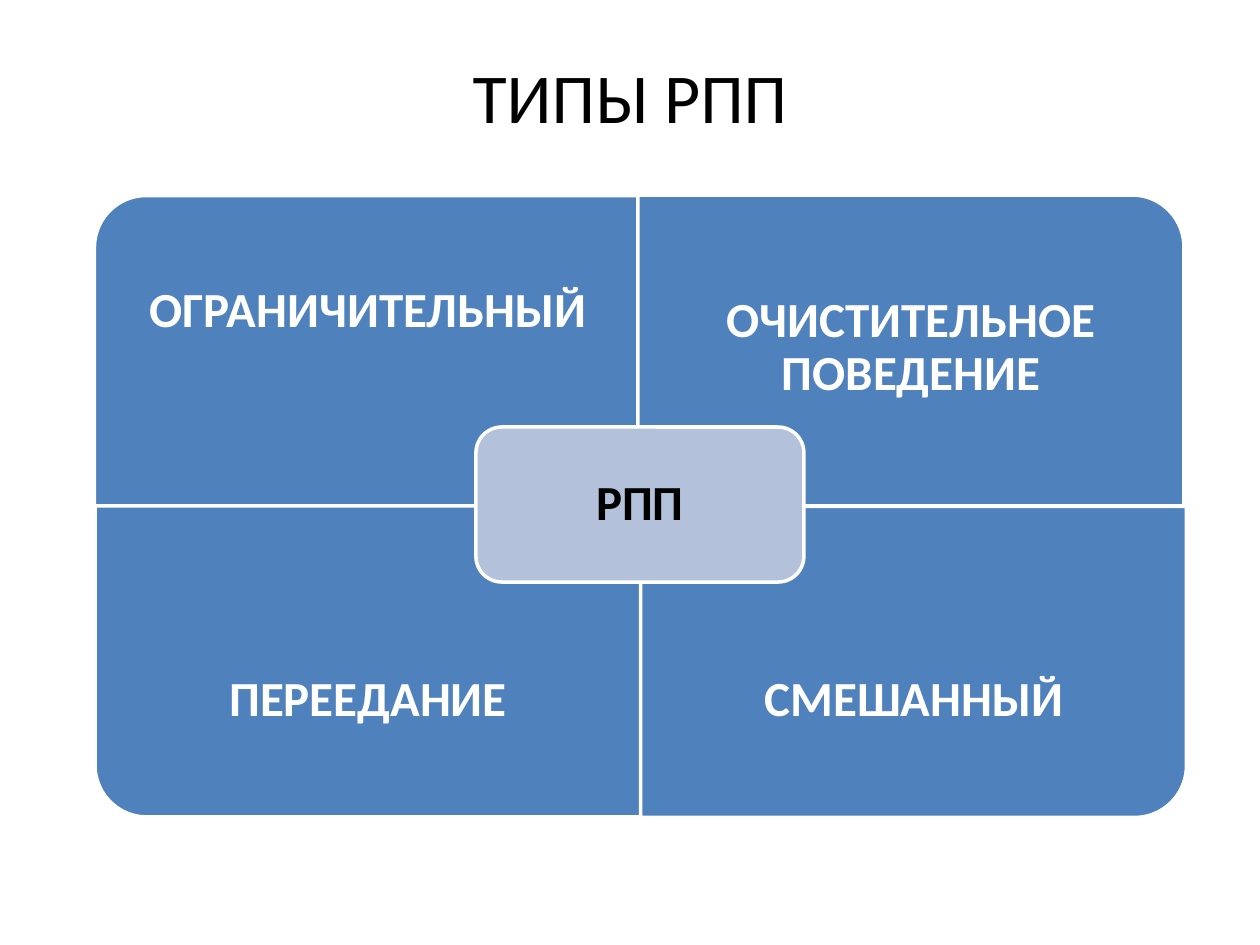
from pptx import Presentation
from pptx.dml.color import RGBColor
from pptx.enum.shapes import MSO_SHAPE
from pptx.enum.text import MSO_ANCHOR, PP_ALIGN
from pptx.util import Pt

PX = 914400 // 126  # EMU in one px
FONT = "Calibri"
WHITE, BLACK, BLUE, PALE = "FFFFFF", "000000", "4F81BD", "B3C1DB"

# Quadrant grid
LEFT, TOP, WIDE, HIGH = 95, 195, 546, 311
TEXT_H = 233

# Label, left, row, turn, extra drop of the text
QUADS = [
    ("ОГРАНИЧИТЕЛЬНЫЙ", LEFT, 0, 270, 0),
    ("ОЧИСТИТЕЛЬНОЕ ПОВЕДЕНИЕ", 638, 0, 0, 37),
    ("ПЕРЕЕДАНИЕ", LEFT, 1, 180, 0),
    ("СМЕШАННЫЙ", LEFT + WIDE, 1, 90, 0),
]


def px(num):
    return num * PX


def color(code):
    return RGBColor.from_string(code)


def style(frame, text, size, code, bold=False):
    frame.text = text
    frame.word_wrap = True
    frame.vertical_anchor = MSO_ANCHOR.MIDDLE
    para = frame.paragraphs[0]
    para.alignment = PP_ALIGN.CENTER
    font = para.runs[0].font
    font.name, font.size, font.bold = FONT, Pt(size), bold
    font.color.rgb = color(code)
    return para


def add_box(slide, kind, left, top, wide, high, fill, turn=0):
    # A quarter turn swaps the sides about the same centre
    if turn % 180:
        left += (wide - high) // 2
        top -= (wide - high) // 2
        wide, high = high, wide
    box = slide.shapes.add_shape(kind, px(left), px(top), px(wide), px(high))
    box.rotation = turn
    box.shadow.inherit = False
    box.fill.solid()
    box.fill.fore_color.rgb = color(fill)
    box.line.color.rgb = color(WHITE)
    box.line.width = Pt(2)


def add_label(slide, text, left, top, wide, high, code, inset, drop=0):
    box = slide.shapes.add_textbox(px(left), px(top), px(wide), px(high))
    frame = box.text_frame
    frame.margin_left = frame.margin_right = px(inset)
    # Shift the middle by taking room from the top inset
    frame.margin_top = px(inset + 2 * drop)
    frame.margin_bottom = px(inset)
    if drop:
        frame.margin_top -= px(inset // 2)
        frame.margin_bottom -= px(inset // 2)
    para = style(frame, text, 28, code, True)
    para.line_spacing = 0.9


def add_title(slide, text):
    title = slide.shapes.title
    title.left, title.top = px(63), px(16)
    title.width, title.height = px(1134), px(158)
    style(title.text_frame, text, 40, BLACK)


def main():
    deck = Presentation()
    deck.slide_width, deck.slide_height = px(1260), px(945)
    slide = deck.slides.add_slide(deck.slide_layouts[5])
    add_title(slide, "ТИПЫ РПП")

    # Four quadrants, each with its outer corner rounded
    for text, left, row, turn, drop in QUADS:
        top = TOP + row * HIGH
        add_box(slide, MSO_SHAPE.ROUND_1_RECTANGLE, left, top, WIDE, HIGH,
                BLUE, turn)
        add_label(slide, text, left, top + row * (HIGH - TEXT_H), WIDE,
                  TEXT_H, WHITE, 28, drop)

    # Centre
    add_box(slide, MSO_SHAPE.ROUNDED_RECTANGLE, 476, 427, 328, 155, PALE)
    add_label(slide, "РПП", 484, 435, 312, 139, BLACK, 15)

    deck.save("out.pptx")


if __name__ == "__main__":
    main()
